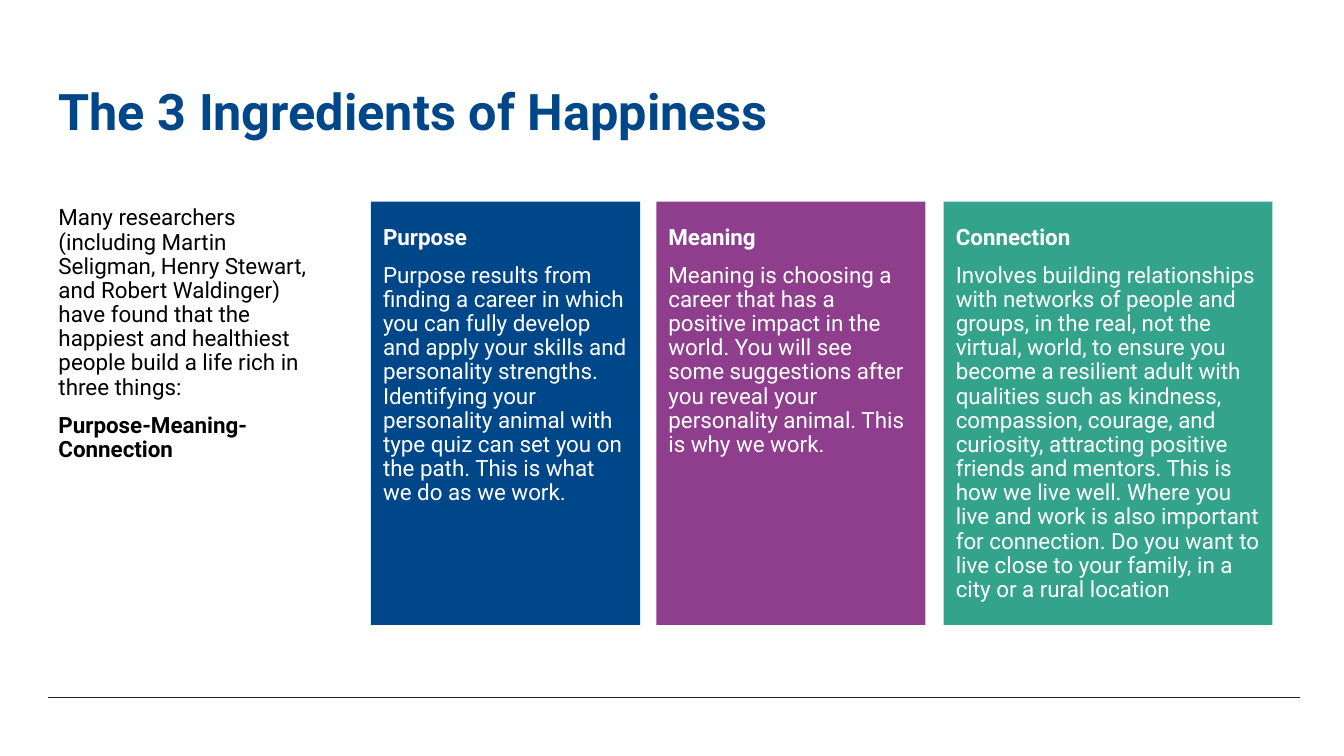
import pptx
import pptx.util
import pptx.dml.color
import pptx.enum.shapes
import pptx.enum.text
from lxml import etree
from pptx.util import Inches

# Content
TITLE = "The 3 Ingredients of Happiness"
INTRO = [
    ("Many researchers (including Martin Seligman, Henry Stewart, and Robert "
     "Waldinger) have found that the happiest and healthiest people build a "
     "life rich in three things:", False),
    ("Purpose-Meaning-Connection", True),
]
# Heading, text, colour, left, width
CARDS = [
    ("Purpose",
     "Purpose results from finding a career in which you can fully develop and "
     "apply your skills and personality strengths. Identifying your "
     "personality animal with type quiz can set you on the path. This is what "
     "we do as we work.",
     "blue", 3.68, 2.67),
    ("Meaning",
     "Meaning is choosing a career that has a positive impact in the world. "
     "You will see some suggestions after you reveal your personality animal. "
     "This is why we work.",
     "purple", 6.51, 2.67),
    ("Connection",
     "Involves building relationships with networks of people and groups, in "
     "the real, not the virtual, world, to ensure you become a resilient adult "
     "with qualities such as kindness, compassion, courage, and curiosity, "
     "attracting positive friends and mentors. This is how we live well. Where "
     "you live and work is also important for connection. Do you want to live "
     "close to your family, in a city or a rural location",
     "green", 9.36, 3.26),
]
COLORS = {"blue": "00478A", "purple": "8F3E8D", "green": "33A38C",
          "black": "000000", "white": "FFFFFF", "rule": "231F20"}
FONT = "Roboto"
LEFT, WIDTH = 0.48, 12.41
TOP, CARD_HEIGHT = 2, 4.2
RULE_Y = 6.92


def rgb(name):
    return pptx.dml.color.RGBColor.from_string(COLORS[name])


def place(sp, left, top, width, height):
    sp.left, sp.top = Inches(left), Inches(top)
    sp.width, sp.height = Inches(width), Inches(height)


def write(tf, lines, size, color, anchor, insets=(0.1, 0.05, 0.1, 0.05)):
    """Fill a text frame with (text, bold) paragraphs."""
    tf.word_wrap = True
    tf.auto_size = pptx.enum.text.MSO_AUTO_SIZE.NONE
    tf.vertical_anchor = anchor
    (tf.margin_left, tf.margin_top,
     tf.margin_right, tf.margin_bottom) = map(Inches, insets)
    for i, (text, bold) in enumerate(lines):
        p = tf.add_paragraph() if i else tf.paragraphs[0]
        p.alignment = pptx.enum.text.PP_ALIGN.LEFT
        p.line_spacing = 0.9
        p.space_before = pptx.util.Pt(10 if i else 0)
        r = p.add_run()
        r.text = text
        r.font.name = FONT
        r.font.size = pptx.util.Pt(size)
        r.font.bold = bold
        r.font.color.rgb = rgb(color)


prs = pptx.Presentation()
prs.slide_width, prs.slide_height = Inches(13.33), Inches(7.5)
s = prs.slides.add_slide(prs.slide_layouts[1])
top_anchor = pptx.enum.text.MSO_ANCHOR.TOP

# Footer rule
rule = s.shapes.add_connector(
    pptx.enum.shapes.MSO_CONNECTOR.STRAIGHT,
    Inches(LEFT), Inches(RULE_Y), Inches(LEFT + WIDTH), Inches(RULE_Y))
rule.line.color.rgb = rgb("rule")
rule.line.width = pptx.util.Pt(0.5)
etree.SubElement(rule._element.spPr, pptx.oxml.ns.qn("a:effectLst"))

# Title
title = s.shapes.title
place(title, LEFT, 0.4, WIDTH, 1.05)
write(title.text_frame, [(TITLE, True)], 36, "blue",
      pptx.enum.text.MSO_ANCHOR.BOTTOM)

# Introduction, without bullets
intro = s.placeholders[1]
place(intro, LEFT, TOP, 2.67, 3.64)
write(intro.text_frame, INTRO, 16, "black", top_anchor)
for p in intro.text_frame.paragraphs:
    pPr = p._p.get_or_add_pPr()
    pPr.set("marL", "0")
    pPr.set("indent", "0")
    etree.SubElement(pPr, pptx.oxml.ns.qn("a:buNone"))

# Ingredient cards
for heading, text, color, left, width in CARDS:
    card = s.shapes.add_shape(
        pptx.enum.shapes.MSO_SHAPE.RECTANGLE,
        Inches(left), Inches(TOP), Inches(width), Inches(CARD_HEIGHT))
    card.shadow.inherit = False
    card.fill.solid()
    card.fill.fore_color.rgb = rgb(color)
    card.line.fill.background()
    write(card.text_frame, [(heading, True), (text, False)], 16, "white",
          top_anchor, (0.12, 0.24, 0.12, 0.08))

prs.save("out.pptx")
